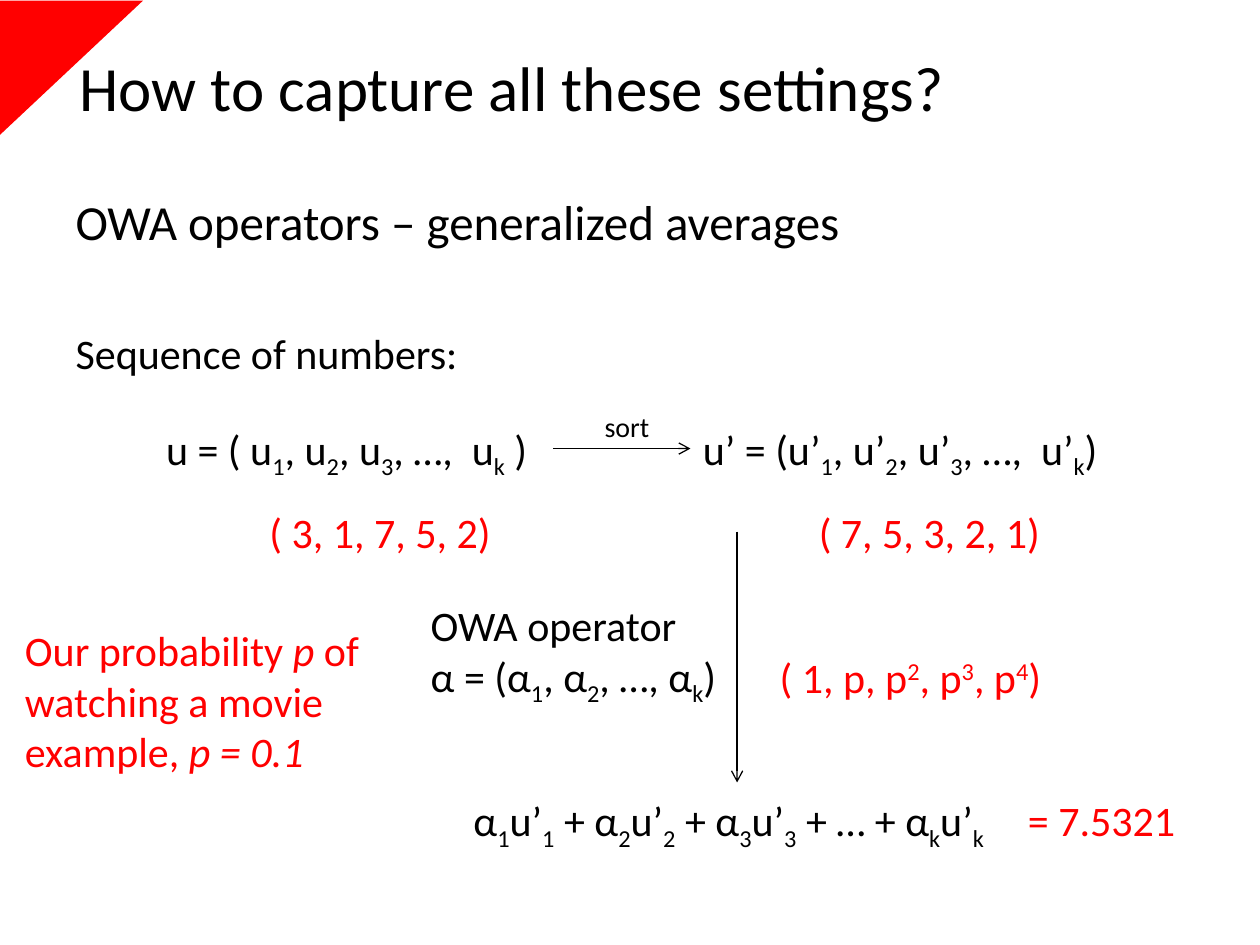
"""Build the slide on OWA operators as generalized averages."""
from dataclasses import dataclass

from lxml import etree
from pptx import Presentation
from pptx.dml.color import RGBColor
from pptx.enum import shapes, text
from pptx.oxml import ns
from pptx.util import Inches, Pt

HUES = {"ink": "000000", "red": "FF0000"}
FONT = "Calibri"
SHIFT = {"_": "-25000", "^": "30000"}


@dataclass
class Note:
    key: str
    box: tuple[float, float, float, float]
    lines: list[str]
    hue: str = "ink"
    size: int = 24
    wrap: bool = False


NOTES = [
    Note("sort", (4.7, 3.2, 0.56, 0.37), ["sort"], size=16),
    Note("input", (1.22, 3.31, 3.17, 0.5), ["u = ( u_1, u_2, u_3, …,  u_k )"]),
    Note("sorted", (5.48, 3.31, 3.42, 0.5), ["u’ = (u’_1, u’_2, u’_3, …,  u’_k)"]),
    Note("numbers", (2.04, 3.97, 1.97, 0.5), ["( 3, 1, 7, 5, 2)"], "red"),
    Note("ranked", (6.4, 3.97, 1.97, 0.5), ["( 7, 5, 3, 2, 1)"], "red"),
    Note("weights", (3.32, 4.71, 2.53, 1.31), ["OWA operator", "α = (α_1, α_2, …, α_k)"]),
    Note("sum", (3.66, 6.26, 4.4, 0.5), ["α_1u’_1 + α_2u’_2 + α_3u’_3 + … + α_ku’_k"]),
    Note("powers", (6.09, 5.12, 2.4, 0.5), ["( 1, p, p^2, p^3, p^4)"], "red"),
    Note("chance", (0.1, 4.91, 2.93, 1.31),
         ["Our probability *p* of watching a movie example, *p = 0.1*"], "red", wrap=True),
    Note("result", (8.06, 6.26, 1.38, 0.5), ["= 7.5321"], "red"),
]


def color(hue: str) -> RGBColor:
    """Look up a colour by name."""
    return RGBColor.from_string(HUES[hue])


def pieces(line: str) -> list[tuple[str, str, bool]]:
    """Split a line into words, shift and slant: _x lowers, ^x lifts, *x* slants."""
    parts, mark, slant = [("", "", False)], "", False
    for char in line:
        if char == "*":
            slant = not slant
        elif char in SHIFT:
            mark = char
        else:
            words, *style = parts[-1]
            if style == [mark, slant]:
                parts[-1] = (words + char, mark, slant)
            else:
                parts.append((char, mark, slant))
            mark = ""
    return [part for part in parts if part[0]]


def write(para, line: str, *, size: int = 24, hue: str = "ink") -> None:
    """Write one marked-up line into a paragraph."""
    para.alignment = text.PP_ALIGN.LEFT
    for words, mark, slant in pieces(line):
        run = para.add_run()
        run.text = words
        font = run.font
        font.name, font.size = FONT, Pt(size)
        font.color.rgb = color(hue)
        if slant:
            font.italic = True
        if mark:
            font._element.set("baseline", SHIFT[mark])


def place(shape, box: tuple[float, float, float, float]) -> None:
    """Move and size a shape."""
    shape.left, shape.top, shape.width, shape.height = map(Inches, box)


def label(slide, note: Note):
    """Add a text box that grows with its text."""
    shape = slide.shapes.add_textbox(*map(Inches, note.box))
    frame = shape.text_frame
    frame.word_wrap = note.wrap
    frame.auto_size = text.MSO_AUTO_SIZE.SHAPE_TO_FIT_TEXT
    for num, line in enumerate(note.lines):
        para = frame.add_paragraph() if num else frame.paragraphs[0]
        write(para, line, size=note.size, hue=note.hue)
    return shape


def arrow(slide, start: tuple[float, float], end: tuple[float, float]):
    """Add a thin line with an open arrowhead at its end."""
    line = slide.shapes.add_connector(
        shapes.MSO_CONNECTOR.STRAIGHT, *map(Inches, start + end))
    line.line.color.rgb = color("ink")
    line.line.width = Pt(0.75)
    etree.SubElement(line.line._get_or_add_ln(), ns.qn("a:tailEnd"), type="arrow")
    etree.SubElement(line._element.spPr, ns.qn("a:effectLst"))
    return line


def corner(slide) -> None:
    """Add the red triangle in the top left corner."""
    shape = slide.shapes.add_shape(
        shapes.MSO_SHAPE.RIGHT_TRIANGLE, *map(Inches, (0.03, -0.03, 1.07, 1.14)))
    shape.rotation = 90
    shape.shadow.inherit = False
    shape.fill.solid()
    shape.fill.fore_color.rgb = color("red")
    shape.line.fill.background()
    tree = slide.shapes._spTree
    tree.remove(shape._element)
    tree.insert(2, shape._element)


def heads(slide) -> None:
    """Fill the title and body placeholders."""
    title, body = slide.placeholders
    place(title, (0.53, 0.29, 9, 0.79))
    write(title.text_frame.paragraphs[0], "How to capture all these settings?", size=36)
    place(body, (0.5, 1.47, 9, 1.8))
    frame = body.text_frame
    frame.auto_size = text.MSO_AUTO_SIZE.NONE
    first, last = frame.paragraphs[0], frame.add_paragraph()
    write(first, "OWA operators – generalized averages", size=28)
    write(last, "Sequence of numbers:")
    last.space_before = Pt(44)
    for para in (first, last):
        props = para._p.get_or_add_pPr()
        props.set("marL", "0")
        props.set("indent", "0")
        etree.SubElement(props, ns.qn("a:buNone"))


def main() -> None:
    """Build and save the deck."""
    deck = Presentation()
    deck.slide_width, deck.slide_height = Inches(10), Inches(7.5)
    slide = deck.slides.add_slide(deck.slide_layouts[1])
    corner(slide)
    heads(slide)
    made = {note.key: label(slide, note) for note in NOTES}
    sort = arrow(slide, (4.38, 3.57), (5.48, 3.57))
    sort.begin_connect(made["input"], 3)
    sort.end_connect(made["sorted"], 1)
    arrow(slide, (5.85, 4.22), (5.85, 6.21))
    deck.save("out.pptx")


if __name__ == "__main__":
    main()
